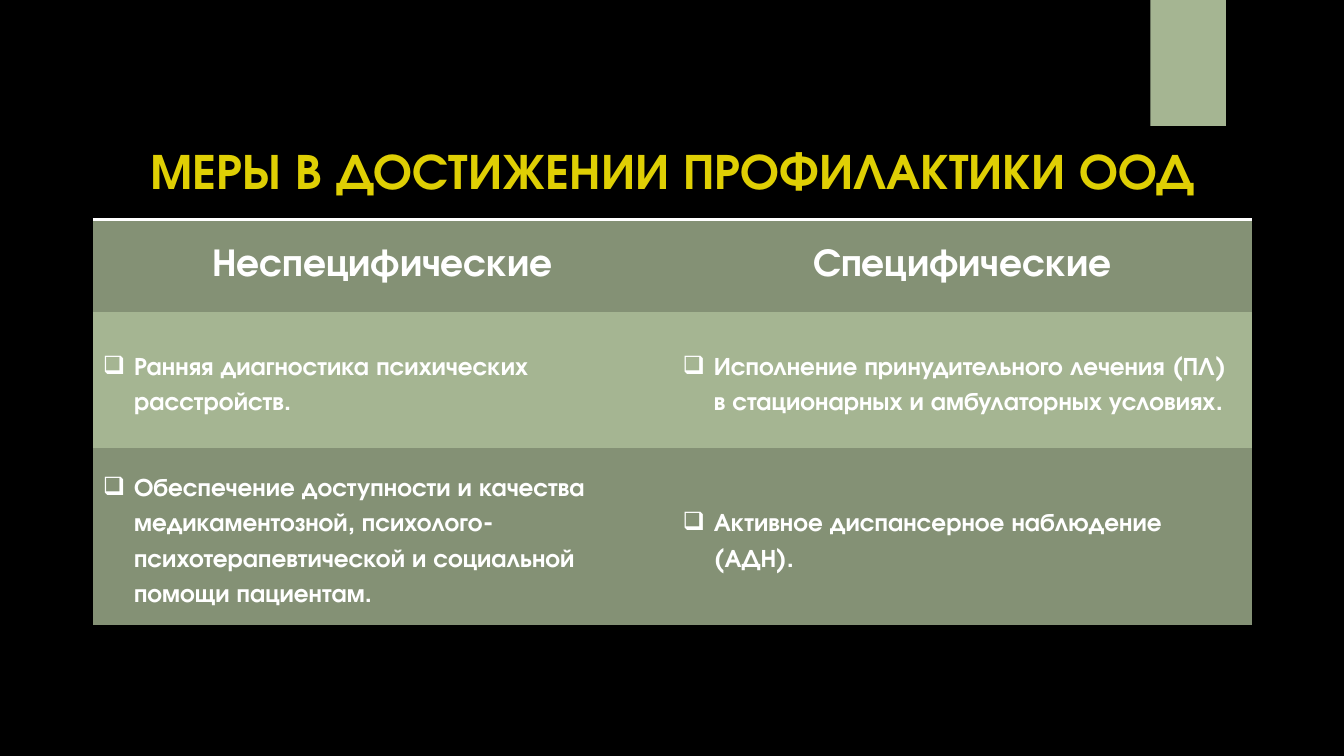
from lxml import etree
from pptx import Presentation
from pptx.dml.color import RGBColor
from pptx.enum.shapes import MSO_SHAPE
from pptx.enum.text import MSO_ANCHOR, PP_ALIGN
from pptx.oxml.ns import qn
from pptx.util import Inches, Pt

RECTANGLE = MSO_SHAPE.RECTANGLE
MIDDLE = MSO_ANCHOR.MIDDLE
CENTER, LEFT = PP_ALIGN.CENTER, PP_ALIGN.LEFT

TITLE = "МЕРЫ В ДОСТИЖЕНИИ ПРОФИЛАКТИКИ ООД"
HEADINGS = ("Неспецифические", "Специфические")
MEASURES = [
    ("Ранняя диагностика психических расстройств.",
     "Исполнение принудительного лечения (ПЛ) в стационарных и амбулаторных условиях."),
    ("Обеспечение доступности и качества медикаментозной, "
     "психолого-психотерапевтической и социальной помощи пациентам.",
     "Активное диспансерное наблюдение (АДН)."),
]

FONT = "TeX Gyre Adventor"
BLACK, WHITE, YELLOW = "000000", "FFFFFF", "DFCF04"
SAGE, DARK_SAGE = "A5B592", "849175"
NO_STYLE = "{2D5ABB26-0587-4C30-8999-92F81FD0307C}"

SLIDE_WIDTH, SLIDE_HEIGHT = 13.33, 7.5
TABLE_LEFT, TABLE_TOP, TABLE_WIDTH = 0.92, 1.31, 11.5
ROW_HEIGHTS = (0.87, 0.92, 1.35, 1.75)
ROW_FILLS = (BLACK, DARK_SAGE, SAGE, DARK_SAGE)
BULLET_INDENT = 0.31


def color(value):
    return RGBColor.from_string(value)


def add_bullet(paragraph, character="❑"):
    properties = paragraph._p.get_or_add_pPr()
    properties.set("marL", str(Inches(BULLET_INDENT)))
    properties.set("indent", str(-Inches(BULLET_INDENT)))
    etree.SubElement(properties, qn("a:buChar")).set("char", character)


def write(cell, text, size, ink=WHITE, align=CENTER, bullet=False):
    cell.vertical_anchor = MIDDLE
    paragraph = cell.text_frame.paragraphs[0]
    paragraph.alignment = align
    if bullet:
        paragraph.line_spacing = 1.5
        add_bullet(paragraph)
    run = paragraph.add_run()
    run.text = text
    run.font.name, run.font.size, run.font.bold = FONT, Pt(size), True
    run.font.color.rgb = color(ink)


def add_bottom_border(cell, ink, width):
    line = etree.Element(qn("a:lnB"), w=str(Pt(width)))
    fill = etree.SubElement(line, qn("a:solidFill"))
    etree.SubElement(fill, qn("a:srgbClr")).set("val", ink)
    cell._tc.get_or_add_tcPr().insert(0, line)


def add_corner_tab(slide):
    tab = slide.shapes.add_shape(
        RECTANGLE, Inches(11.41), 0, Inches(0.75), Inches(SLIDE_HEIGHT / 6))
    tab.shadow.inherit = False
    tab.fill.solid()
    tab.fill.fore_color.rgb = color(SAGE)
    tab.line.fill.background()


def add_measures_table(slide):
    table = slide.shapes.add_table(
        len(ROW_HEIGHTS), len(HEADINGS), Inches(TABLE_LEFT), Inches(TABLE_TOP),
        Inches(TABLE_WIDTH), Inches(sum(ROW_HEIGHTS))).table
    table.first_row = table.horz_banding = False
    table._tbl.tblPr.find(qn("a:tableStyleId")).text = NO_STYLE

    for row, height, fill in zip(table.rows, ROW_HEIGHTS, ROW_FILLS):
        row.height = Inches(height)
        for cell in row.cells:
            cell.fill.solid()
            cell.fill.fore_color.rgb = color(fill)

    for cell in table.rows[0].cells:
        add_bottom_border(cell, WHITE, 2)
    table.cell(0, 0).merge(table.cell(0, len(HEADINGS) - 1))
    write(table.cell(0, 0), TITLE, 36, ink=YELLOW)
    for column, heading in enumerate(HEADINGS):
        write(table.cell(1, column), heading, 28)
    for row, measures in enumerate(MEASURES, start=2):
        for column, measure in enumerate(measures):
            write(table.cell(row, column), measure, 18, align=LEFT, bullet=True)


def main():
    presentation = Presentation()
    presentation.slide_width = Inches(SLIDE_WIDTH)
    presentation.slide_height = Inches(SLIDE_HEIGHT)
    slide = presentation.slides.add_slide(presentation.slide_layouts[6])
    slide.background.fill.solid()
    slide.background.fill.fore_color.rgb = color(BLACK)
    add_corner_tab(slide)
    add_measures_table(slide)
    presentation.save("out.pptx")


if __name__ == "__main__":
    main()
